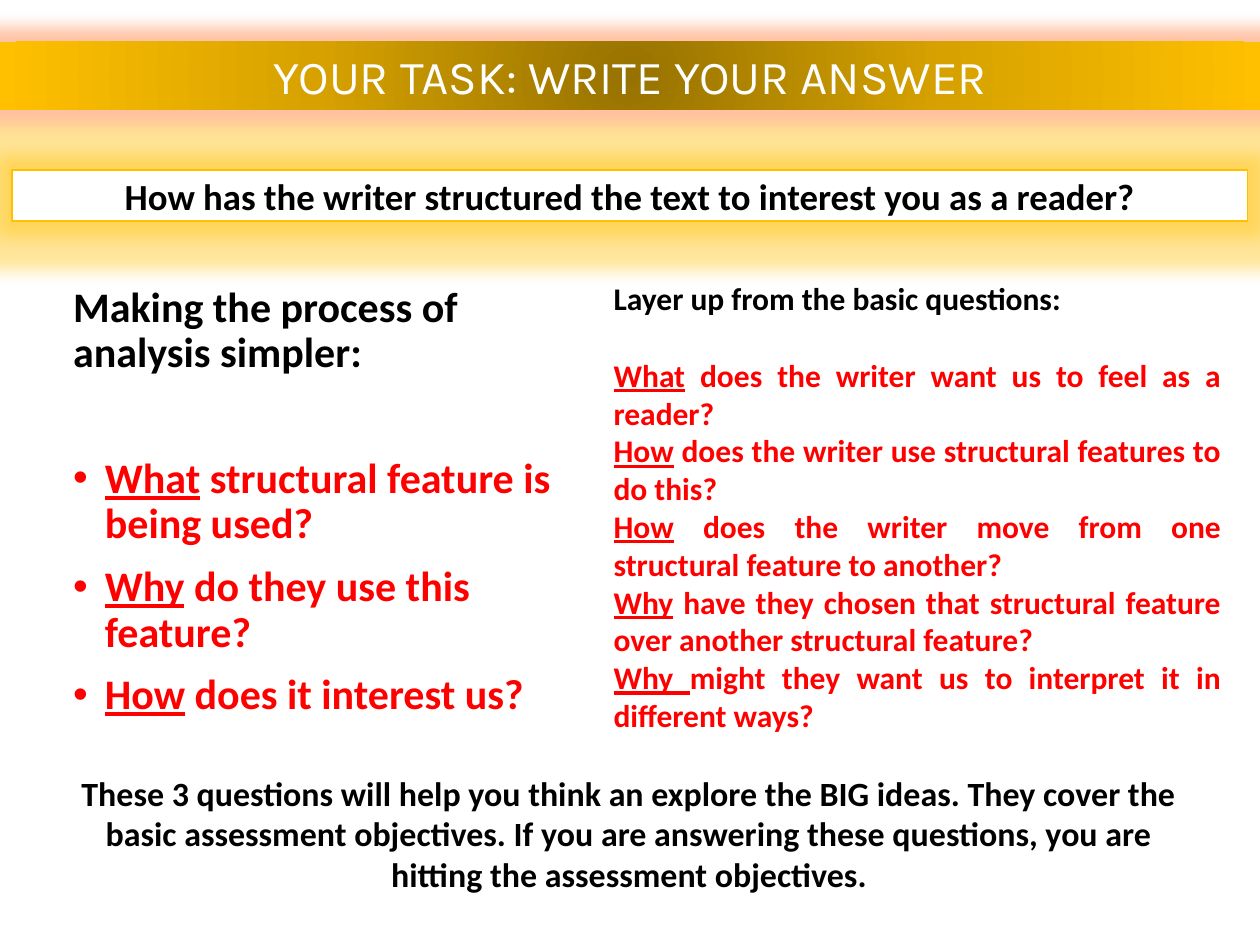
from lxml.etree import SubElement
from pptx import Presentation
from pptx.dml.color import RGBColor
from pptx.enum.shapes import MSO_SHAPE as Shape
from pptx.enum.text import MSO_ANCHOR as Anchor, MSO_AUTO_SIZE as AutoSize, PP_ALIGN as Align
from pptx.oxml import parse_xml
from pptx.oxml.ns import nsdecls, qn
from pptx.util import Cm, Pt

BLACK, WHITE, RED, GOLD = "000000", "FFFFFF", "FF0000", "FFC000"

LEFT_QUESTIONS = [
    ("What", " structural feature is being used?"),
    ("Why", " do they use this feature?"),
    ("How", " does it interest us?"),
]
RIGHT_QUESTIONS = [
    ("What", " does the writer want us to feel as a reader?"),
    ("How", " does the writer use structural features to do this?"),
    ("How", " does the writer move from one structural feature to another?"),
    ("Why", " have they chosen that structural feature over another structural feature?"),
    ("Why ", "might they want us to interpret it in different ways?"),
]


def color(hex_string):
    return RGBColor.from_string(hex_string)


def add_text(paragraph, text, size=24, font="Calibri", fill=BLACK, bold=True, underline=False):
    run = paragraph.add_run()
    run.text = text
    run.font.size = Pt(size)
    run.font.name = font
    run.font.bold = bold
    run.font.underline = underline
    run.font.color.rgb = color(fill)


def add_question(paragraph, question, size):
    """Write a question in red with its opening word underlined."""
    keyword, rest = question
    add_text(paragraph, keyword, size=size, fill=RED, underline=True)
    add_text(paragraph, rest, size=size, fill=RED)


def place(shape, left, top, width, height):
    shape.left, shape.top = Cm(left), Cm(top)
    shape.width, shape.height = Cm(width), Cm(height)


def add_glow(shape, hex_string):
    shape._element.spPr.append(parse_xml(
        f'<a:effectLst {nsdecls("a")}><a:glow rad="228600"><a:srgbClr val="{hex_string}">'
        '<a:alpha val="40000"/></a:srgbClr></a:glow></a:effectLst>'))


def fill_radial(shape, stops):
    """Fill with a gradient that runs outwards from the centre."""
    stop_xml = "".join(f'<a:gs pos="{percent * 1000}"><a:srgbClr val="{hex_string}"/></a:gs>'
                       for percent, hex_string in stops)
    shape._element.spPr.append(parse_xml(
        f'<a:gradFill {nsdecls("a")} rotWithShape="1"><a:gsLst>{stop_xml}</a:gsLst>'
        '<a:path path="circle"><a:fillToRect l="50000" t="50000" r="50000" b="50000"/></a:path>'
        '</a:gradFill>'))


def set_bullet(paragraph, character=None, indent=0):
    properties = paragraph._p.get_or_add_pPr()
    properties.set("marL", str(Cm(indent)))
    properties.set("indent", str(-Cm(indent)))
    if character:
        SubElement(properties, qn("a:buFont"), typeface="Arial")
        SubElement(properties, qn("a:buChar"), char=character)
    else:
        SubElement(properties, qn("a:buNone"))


def build_title(title):
    place(title, 0, 0.84, 25.4, 1.37)
    fill_radial(title, [(0, "977200"), (50, "D7A200"), (100, GOLD)])
    add_glow(title, "FF6A1E")
    frame = title.text_frame
    frame.auto_size = AutoSize.NONE
    frame.vertical_anchor = Anchor.MIDDLE
    paragraph = frame.paragraphs[0]
    paragraph.alignment = Align.CENTER
    add_text(paragraph, "YOUR TASK: WRITE YOUR ANSWER", size=27, font="Karla",
             fill=WHITE, bold=False)


def add_key_question(slide):
    box = slide.shapes.add_shape(Shape.RECTANGLE, Cm(0.25), Cm(3.43), Cm(24.9), Cm(1.02))
    box.fill.solid()
    box.fill.fore_color.rgb = color(WHITE)
    box.line.color.rgb = color(GOLD)
    box.line.width = Pt(1)
    add_glow(box, GOLD)
    box.text_frame.vertical_anchor = Anchor.MIDDLE
    paragraph = box.text_frame.paragraphs[0]
    paragraph.alignment = Align.CENTER
    add_text(paragraph, "How has the writer structured the text to interest you as a reader?",
             size=21)


def build_simple_list(body):
    place(body, 1.22, 5.64, 10.19, 6.2)
    frame = body.text_frame
    frame.auto_size = AutoSize.NONE
    heading = frame.paragraphs[0]
    set_bullet(heading)
    heading.line_spacing = 0.9
    heading.space_before = Pt(0)
    add_text(heading, "Making the process of analysis simpler:")
    for index, question in enumerate(LEFT_QUESTIONS):
        paragraph = frame.add_paragraph()
        set_bullet(paragraph, "•", 0.64)
        paragraph.line_spacing = 0.9
        paragraph.space_before = Pt(10 if index else 46)
        add_question(paragraph, question, 24)


def add_text_box(slide, left, top, width, height):
    frame = slide.shapes.add_textbox(Cm(left), Cm(top), Cm(width), Cm(height)).text_frame
    frame.word_wrap = True
    return frame


def add_layered_questions(slide):
    frame = add_text_box(slide, 12.12, 5.51, 12.75, 11.02)
    heading = frame.paragraphs[0]
    heading.alignment = Align.JUSTIFY
    add_text(heading, "Layer up from the basic questions:", size=18)
    for index, question in enumerate(RIGHT_QUESTIONS):
        paragraph = frame.add_paragraph()
        paragraph.alignment = Align.JUSTIFY
        paragraph.space_before = Pt(0 if index else 22)
        add_question(paragraph, question, 18)


def add_summary(slide):
    frame = add_text_box(slide, 1.22, 15.57, 22.94, 2.34)
    frame.margin_left = frame.margin_top = frame.margin_right = frame.margin_bottom = 0
    paragraph = frame.paragraphs[0]
    paragraph.alignment = Align.CENTER
    add_text(paragraph, "These 3 questions will help you think an explore the BIG ideas. "
             "They cover the basic assessment objectives. If you are answering these "
             "questions, you are hitting the assessment objectives.", size=19.4)


def main():
    presentation = Presentation()
    presentation.slide_width, presentation.slide_height = Cm(25.4), Cm(19.05)
    slide = presentation.slides.add_slide(presentation.slide_layouts[1])
    build_title(slide.shapes.title)
    add_key_question(slide)
    build_simple_list(slide.placeholders[1])
    add_summary(slide)
    add_layered_questions(slide)
    presentation.save("out.pptx")


if __name__ == "__main__":
    main()
